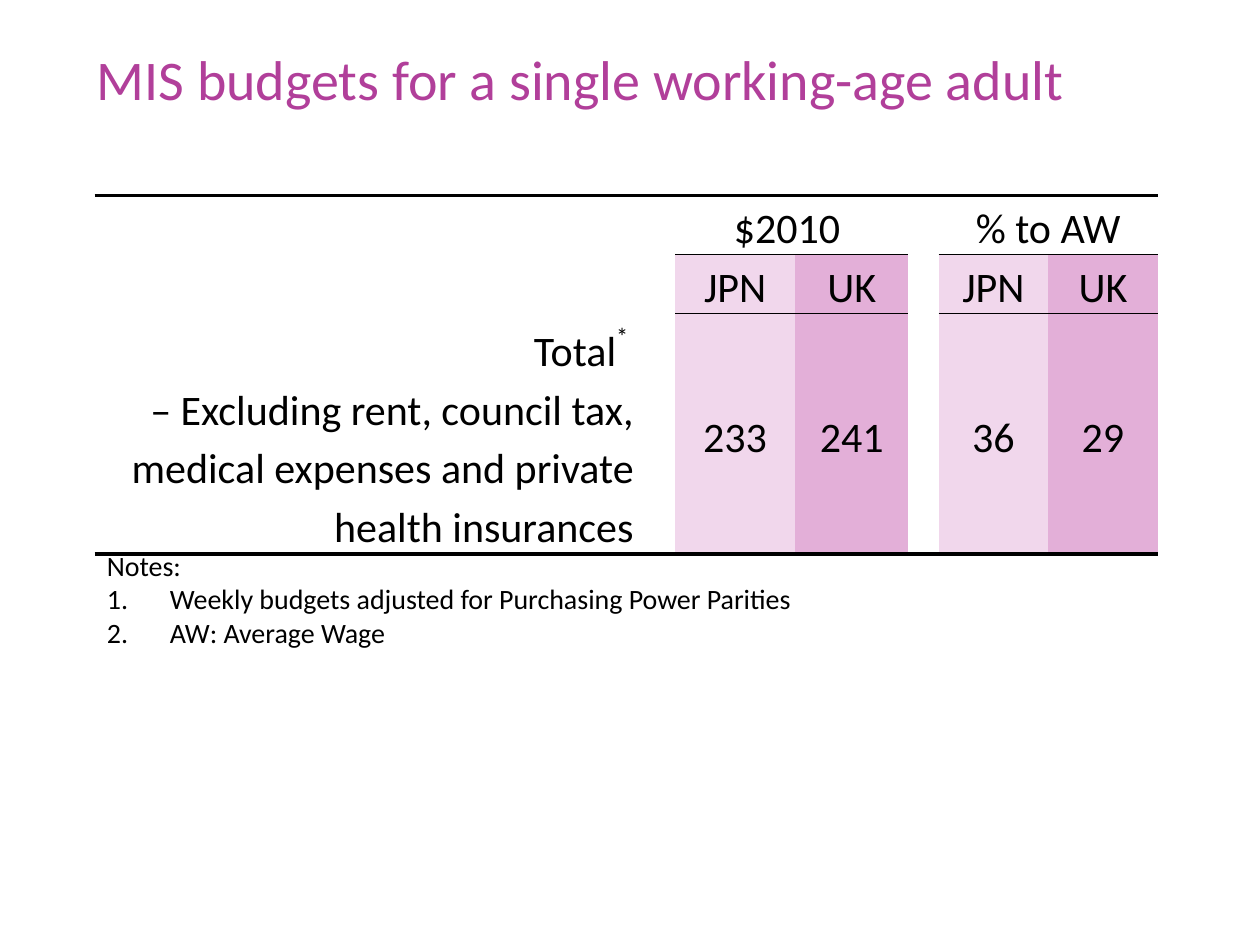
import dataclasses
import typing

import lxml.etree
import pptx
import pptx.dml.color
import pptx.enum.text
import pptx.oxml.ns
import pptx.util

RGBColor = pptx.dml.color.RGBColor
Inches = pptx.util.Inches
Pt = pptx.util.Pt
ALIGN = pptx.enum.text.PP_ALIGN
ANCHOR = pptx.enum.text.MSO_ANCHOR

BLACK = RGBColor(0x00, 0x00, 0x00)
PURPLE = RGBColor(0xB1, 0x3F, 0x9A)
PALE_PINK = RGBColor(0xF1, 0xD7, 0xEC)
DEEP_PINK = RGBColor(0xE3, 0xAF, 0xD8)

SLIDE_WIDTH, SLIDE_HEIGHT = 10, 7.5
FONT = "Calibri"
COLUMN_WIDTHS = (4.35, 0.26, 0.95, 0.9, 0.24, 0.87, 0.87)
ROW_HEIGHTS = (0.46, 0.47, 1.9)
COLUMN_FILLS = {2: PALE_PINK, 3: DEEP_PINK, 5: PALE_PINK, 6: DEEP_PINK}
THICK, THIN = 2.25, 1


@dataclasses.dataclass(frozen=True)
class Area:
    left: float
    top: float
    width: float
    height: float

    def lengths(self) -> tuple[int, ...]:
        shares = (self.left, self.top, self.width, self.height)
        sides = (SLIDE_WIDTH, SLIDE_HEIGHT) * 2
        return tuple(Inches(share * side) for share, side in zip(shares, sides))


@dataclasses.dataclass(frozen=True)
class Entry:
    row: int
    column: int
    text: str
    anchor: typing.Any = ANCHOR.BOTTOM
    span: int = 1


@dataclasses.dataclass(frozen=True)
class TextBlock:
    area: Area
    lines: tuple[str, ...]
    size: int
    color: RGBColor
    numbered_from: int


ENTRIES = (
    Entry(0, 2, "$2010 ", span=2),
    Entry(0, 5, "% to AW", span=2),
    Entry(1, 2, "JPN"),
    Entry(1, 3, "UK"),
    Entry(1, 5, "JPN"),
    Entry(1, 6, "UK"),
    Entry(2, 2, "233", ANCHOR.MIDDLE),
    Entry(2, 3, "241", ANCHOR.MIDDLE),
    Entry(2, 5, "36", ANCHOR.MIDDLE),
    Entry(2, 6, "29", ANCHOR.MIDDLE),
)

TITLE = TextBlock(
    Area(0.067, 0.039, 0.85, 0.092),
    ("MIS budgets for a single working-age adult",), 32, PURPLE, 1)
NOTES = TextBlock(
    Area(0.075, 0.595, 0.858, 0.105),
    ("Notes:", "Weekly budgets adjusted for Purchasing Power Parities",
     "AW: Average Wage"), 16, BLACK, 1)
TABLE_AREA = Area(0.075, 0.207, 0.844, 0.377)


def style_paragraph(para: typing.Any, size: int, color: RGBColor) -> None:
    para.font.name = FONT
    para.font.size = Pt(size)
    para.font.color.rgb = color


def add_text_block(page: typing.Any, block: TextBlock) -> None:
    frame = page.shapes.add_textbox(*block.area.lengths()).text_frame
    frame.word_wrap = True
    frame.vertical_anchor = ANCHOR.BOTTOM
    frame.margin_bottom = Inches(0.1)
    frame.text = "\n".join(block.lines)
    for index, para in enumerate(frame.paragraphs):
        style_paragraph(para, block.size, block.color)
        if index >= block.numbered_from:
            number_paragraph(para)


def number_paragraph(para: typing.Any) -> None:
    properties = para._p.get_or_add_pPr()
    properties.set("marL", str(Inches(0.5)))
    properties.set("indent", str(-Inches(0.5)))
    numbering = pptx.oxml.ns.qn("a:buAutoNum")
    bullet = properties.makeelement(numbering, {"type": "arabicPeriod"})
    properties.insert_element_before(bullet, "a:tabLst", "a:defRPr", "a:extLst")


def rule_weight(boundary: int, column: int) -> float:
    if boundary in (0, len(ROW_HEIGHTS)):
        return THICK
    return THIN if column in COLUMN_FILLS else 0


def add_border(cell: typing.Any, side: str, weight: float) -> None:
    qn = pptx.oxml.ns.qn
    properties = cell._tc.get_or_add_tcPr()
    line = lxml.etree.SubElement(properties, qn(f"a:ln{side}"), w=str(Pt(weight)))
    if weight:
        fill = lxml.etree.SubElement(line, qn("a:solidFill"))
        lxml.etree.SubElement(fill, qn("a:srgbClr"), val=str(BLACK))
    else:
        lxml.etree.SubElement(line, qn("a:noFill"))


def format_cell(cell: typing.Any, row: int, column: int) -> None:
    weights = {"L": 0, "R": 0, "T": rule_weight(row, column),
               "B": rule_weight(row + 1, column)}
    for side, weight in weights.items():
        add_border(cell, side, weight)
    cell.margin_left = cell.margin_right = Inches(0.07)
    cell.margin_top = cell.margin_bottom = 0
    if row and column in COLUMN_FILLS:
        cell.fill.solid()
        cell.fill.fore_color.rgb = COLUMN_FILLS[column]
    else:
        cell.fill.background()


def style_cell_text(cell: typing.Any, anchor: typing.Any, alignment: typing.Any) -> None:
    cell.vertical_anchor = anchor
    for para in cell.text_frame.paragraphs:
        para.alignment = alignment
        para.line_spacing = 1.15
        style_paragraph(para, 24, BLACK)


def fill_total_cell(cell: typing.Any) -> None:
    cell.text = ("Total\n– Excluding rent, council tax, medical expenses "
                 "and private health insurances")
    marker = cell.text_frame.paragraphs[0].add_run()
    marker.text = "* "
    marker._r.get_or_add_rPr().set("baseline", "50000")
    style_cell_text(cell, ANCHOR.BOTTOM, ALIGN.RIGHT)


def add_budget_table(page: typing.Any) -> None:
    table = page.shapes.add_table(
        len(ROW_HEIGHTS), len(COLUMN_WIDTHS), *TABLE_AREA.lengths()).table
    table.first_row = False
    table.horz_banding = False
    for column, width in enumerate(COLUMN_WIDTHS):
        table.columns[column].width = Inches(width)
    for row, height in enumerate(ROW_HEIGHTS):
        table.rows[row].height = Inches(height)
        for column in range(len(COLUMN_WIDTHS)):
            format_cell(table.cell(row, column), row, column)
    for entry in ENTRIES:
        cell = table.cell(entry.row, entry.column)
        if entry.span > 1:
            cell.merge(table.cell(entry.row, entry.column + entry.span - 1))
        cell.text = entry.text
        style_cell_text(cell, entry.anchor, ALIGN.CENTER)
    fill_total_cell(table.cell(2, 0))


def main() -> None:
    deck = pptx.Presentation()
    deck.slide_width = Inches(SLIDE_WIDTH)
    deck.slide_height = Inches(SLIDE_HEIGHT)
    page = deck.slides.add_slide(deck.slide_layouts[6])
    add_budget_table(page)
    add_text_block(page, TITLE)
    add_text_block(page, NOTES)
    deck.save("out.pptx")


if __name__ == "__main__":
    main()
